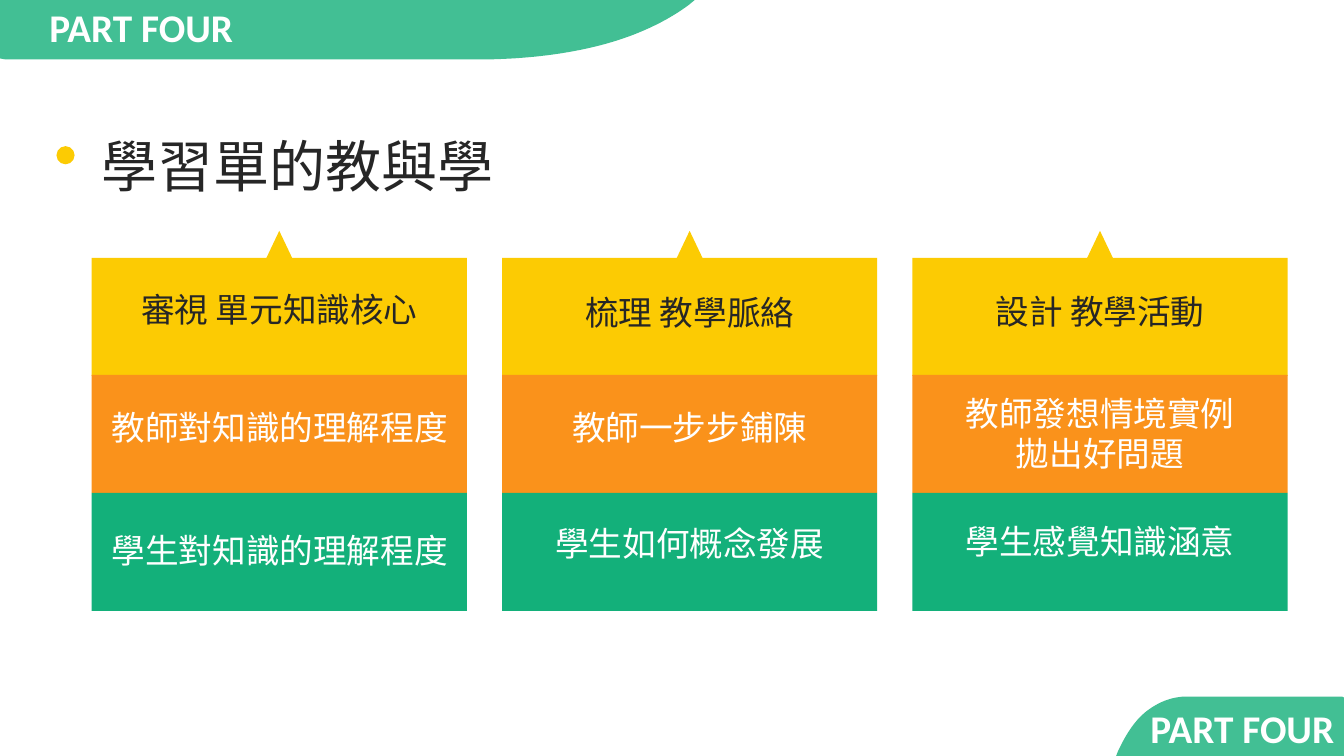
from lxml import etree
from pptx import Presentation
from pptx import util as u
from pptx.dml.color import RGBColor
from pptx.enum import shapes, text
from pptx.oxml.ns import qn

PX = 9144  # one hundredth of an inch in EMU
WIDTH, HEIGHT = 1333, 750
COLORS = {"yellow": "FCCB03", "orange": "FA921B", "green": "13B07A",
          "dark": "262626", "white": "FFFFFF"}

COLUMN_LEFT, COLUMN_STEP, COLUMN_WIDTH = 91, 407, 372
ROW_TOP, ROW_HEIGHT = 256, 117
ROWS = [("yellow", "dark"), ("orange", "white"), ("green", "white")]

# Each cell: lines, top, width and height of its text
COLUMNS = [
    [(["審視 單元知識核心"], 282, 316, 61),
     (["教師對知識的理解程度"], 399, 371, 61),
     (["學生對知識的理解程度"], 521, 363, 50)],
    [(["梳理 教學脈絡"], 285, 288, 61),
     (["教師一步步鋪陳"], 399, 372, 50),
     (["學生如何概念發展"], 514, 288, 61)],
    [(["設計 教學活動"], 284, 288, 61),
     (["教師發想情境實例", "拋出好問題"], 385, 288, 91),
     (["學生感覺知識涵意"], 512, 288, 61)],
]

# Outlines: a pair is a corner, a triple of pairs is a curve
TOP_BAND = [(0, 0), (689, 0), (683, 5),
            ((660, 22), (630, 36), (595, 45)),
            ((560, 54), (519, 59), (473, 59)), (6, 59), (0, 58)]
BOTTOM_BAND = [(1333, 750), (1107, 750), (1109, 745),
               ((1117, 728), (1126, 714), (1138, 705)),
               ((1150, 696), (1163, 691), (1178, 691)), (1331, 691), (1333, 692)]


def rgb(name):
    return RGBColor.from_string(COLORS[name])


def paint(shape, color):
    shape.shadow.inherit = False
    shape.fill.solid()
    shape.fill.fore_color.rgb = rgb(color)
    shape.line.fill.background()


def curve_points(start, bend, steps=24):
    for step in range(1, steps + 1):
        t = step / steps
        weights = ((1 - t) ** 3, 3 * t * (1 - t) ** 2, 3 * t * t * (1 - t), t ** 3)
        yield tuple(sum(w * p[axis] for w, p in zip(weights, (start, *bend)))
                    for axis in (0, 1))


def add_band(page, outline):
    points = []
    for part in outline:
        points += curve_points(points[-1], part) if len(part) == 3 else [part]
    points = [(round(x * PX), round(y * PX)) for x, y in points]
    builder = page.shapes.build_freeform(*points[0], scale=1.0)
    builder.add_line_segments(points[1:], close=True)
    band = builder.convert_to_shape()
    paint(band, "green")
    tint = band._element.spPr.find(qn("a:solidFill"))[0]
    etree.SubElement(tint, qn("a:alpha"), val="80000")


def add_block(parent, kind, color, left, top, width, height):
    block = parent.shapes.add_shape(kind, *(n * PX for n in (left, top, width, height)))
    paint(block, color)


def write(box, lines, size, color, align, spacing=1.0, bold=False,
          anchor=text.MSO_ANCHOR.TOP, fit=text.MSO_AUTO_SIZE.SHAPE_TO_FIT_TEXT):
    frame = box.text_frame
    frame.text = "\n".join(lines)
    for name, value in {"word_wrap": True, "vertical_anchor": anchor,
                        "auto_size": fit}.items():
        setattr(frame, name, value)
    for para in frame.paragraphs:
        para.alignment = align
        para.line_spacing = spacing
        for span in para.runs:
            for name, value in {"name": "Calibri", "size": u.Pt(size),
                                "bold": bold}.items():
                setattr(span.font, name, value)
            span.font.color.rgb = rgb(color)


def add_text(parent, left, top, width, height, lines, *style, **options):
    box = parent.shapes.add_textbox(*(n * PX for n in (left, top, width, height)))
    write(box, lines, *style, **options)


def add_part_label(page, left, top, align):
    add_text(page, left, top, 235, 51, ["PART FOUR"], 28, "white", align,
             spacing=0.9, bold=True, anchor=text.MSO_ANCHOR.MIDDLE,
             fit=text.MSO_AUTO_SIZE.NONE)


def add_heading(page):
    title = page.shapes.title
    for name, value in {"left": 91, "top": 106, "width": 1200, "height": 98}.items():
        setattr(title, name, value * PX)
    write(title, ["學習單的教與學"], 40, "dark", text.PP_ALIGN.JUSTIFY, spacing=1.3)
    add_block(page, shapes.MSO_SHAPE.OVAL, "yellow", 56, 145, 18, 18)


def add_column(page, left, cells):
    group = page.shapes.add_group_shape()
    center = left + COLUMN_WIDTH // 2
    for row, (fill, _) in enumerate(ROWS):
        top = ROW_TOP + row * 233 // 2
        add_block(group, shapes.MSO_SHAPE.RECTANGLE, fill,
                  left, top, COLUMN_WIDTH, ROW_HEIGHT)
    add_block(group, shapes.MSO_SHAPE.ISOSCELES_TRIANGLE, "yellow",
              center - 29, 229, 58, 61)
    for (_, color), (lines, top, width, height) in zip(ROWS, cells):
        add_text(group, center - width // 2, top, width, height,
                 lines, 24, color, text.PP_ALIGN.CENTER)


def main():
    deck = Presentation()
    deck.slide_width, deck.slide_height = WIDTH * PX, HEIGHT * PX
    page = deck.slides.add_slide(deck.slide_layouts[5])

    # Corner bands and their labels
    add_band(page, TOP_BAND)
    add_band(page, BOTTOM_BAND)
    add_part_label(page, 39, 4, text.PP_ALIGN.LEFT)
    add_part_label(page, WIDTH - 235, 699, text.PP_ALIGN.RIGHT)

    # Heading and the three columns
    add_heading(page)
    for index, cells in enumerate(COLUMNS):
        add_column(page, COLUMN_LEFT + index * COLUMN_STEP, cells)

    deck.save("out.pptx")


if __name__ == "__main__":
    main()
